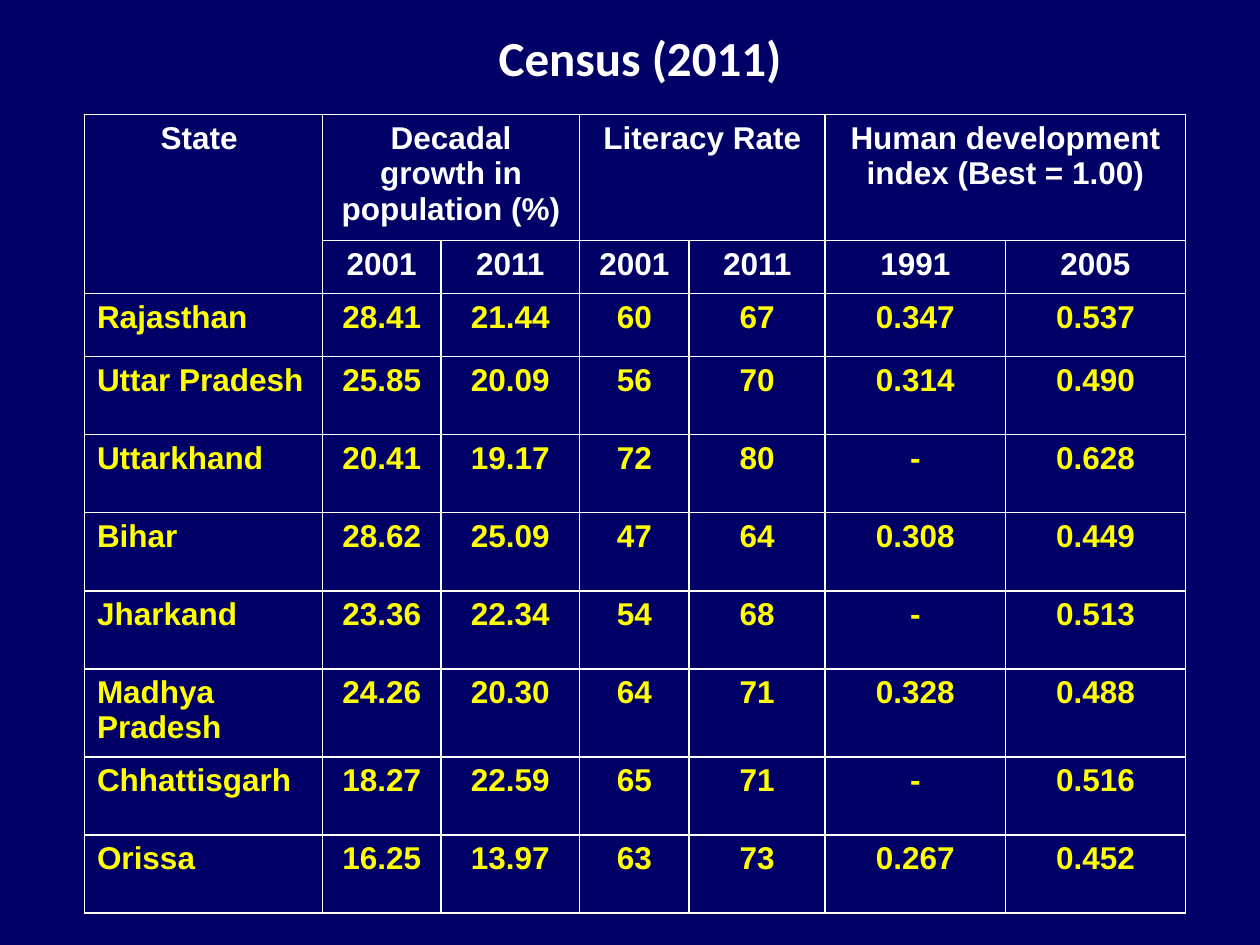
from lxml import etree
from pptx import Presentation
from pptx.dml.color import RGBColor
from pptx.enum.text import MSO_ANCHOR, PP_ALIGN
from pptx.oxml.ns import qn
from pptx.util import Inches, Pt

NAVY = RGBColor(0x00, 0x00, 0x66)
WHITE = RGBColor(0xFF, 0xFF, 0xFF)
YELLOW = RGBColor(0xFF, 0xFF, 0x00)
LEFT, CENTER, TOP = PP_ALIGN.LEFT, PP_ALIGN.CENTER, MSO_ANCHOR.TOP
TITLE_ONLY = 5

COLUMN_WIDTHS = [1.89, 0.94, 1.1, 0.87, 1.08, 1.43, 1.43]
ROW_HEIGHTS = [1, 0.42, 0.5, 0.62, 0.62, 0.62, 0.62, 0.7, 0.62, 0.62]

# Header groups: first column, columns spanned, rows spanned, text
HEADER_GROUPS = [
    (0, 1, 2, "State "),
    (1, 2, 1, "Decadal growth in population (%)"),
    (3, 2, 1, "Literacy Rate"),
    (5, 2, 1, "Human development index (Best = 1.00)"),
]
YEARS = ["2001", "2011", "2001", "2011", "1991", "2005"]
STATES = [
    ("Rajasthan", "28.41", "21.44", "60", "67", "0.347", "0.537"),
    ("Uttar Pradesh", "25.85", "20.09", "56", "70", "0.314", "0.490"),
    ("Uttarkhand", "20.41", "19.17", "72", "80", "-", "0.628"),
    ("Bihar", "28.62", "25.09", "47", "64", "0.308", "0.449"),
    ("Jharkand", "23.36", "22.34", "54", "68", "-", "0.513"),
    ("Madhya Pradesh", "24.26", "20.30", "64", "71", "0.328", "0.488"),
    ("Chhattisgarh", "18.27", "22.59", "65", "71", "-", "0.516"),
    ("Orissa", "16.25", "13.97", "63", "73", "0.267", "0.452"),
]


def write_text(text_frame, text, font_name, size, color, alignment):
    text_frame.text = text
    paragraph = text_frame.paragraphs[0]
    paragraph.alignment = alignment
    font = paragraph.runs[0].font
    font.name, font.size, font.bold = font_name, Pt(size), True
    font.color.rgb = color


def write_cell(cell, text, color=WHITE, alignment=CENTER):
    write_text(cell.text_frame, text, "Arial", 18, color, alignment)


def add_borders(cell, color, width):
    properties = cell._tc.get_or_add_tcPr()
    for index, side in enumerate(("lnL", "lnR", "lnT", "lnB")):
        line = etree.Element(qn(f"a:{side}"), w=str(Pt(width)))
        fill = etree.SubElement(line, qn("a:solidFill"))
        etree.SubElement(fill, qn("a:srgbClr"), val=str(color))
        properties.insert(index, line)


def add_title(slide, text):
    title = slide.shapes.title
    title.left, title.top = Inches(0.83), Inches(0.17)
    title.width, title.height = Inches(8.5), Inches(0.57)
    title.text_frame.vertical_anchor = TOP
    write_text(title.text_frame, text, "Calibri", 28, WHITE, CENTER)


def add_census_table(slide):
    frame = slide.shapes.add_table(
        len(ROW_HEIGHTS), len(COLUMN_WIDTHS), Inches(0.67), Inches(0.91),
        Inches(sum(COLUMN_WIDTHS)), Inches(sum(ROW_HEIGHTS)))
    table = frame.table
    table.first_row = table.horz_banding = False
    for column, width in zip(table.columns, COLUMN_WIDTHS):
        column.width = Inches(width)
    for row, height in zip(table.rows, ROW_HEIGHTS):
        row.height = Inches(height)
    for cell in table.iter_cells():
        cell.fill.background()
        add_borders(cell, WHITE, 1)

    # Two header rows
    for column, width, height, text in HEADER_GROUPS:
        cell = table.cell(0, column)
        cell.merge(table.cell(height - 1, column + width - 1))
        write_cell(cell, text)
    for column, year in enumerate(YEARS, start=1):
        write_cell(table.cell(1, column), year)

    # One row per state
    for row, values in enumerate(STATES, start=2):
        for column, value in enumerate(values):
            alignment = CENTER if column else LEFT
            write_cell(table.cell(row, column), value, YELLOW, alignment)


def main():
    presentation = Presentation()
    presentation.slide_width = Inches(10)
    presentation.slide_height = Inches(7.5)
    slide = presentation.slides.add_slide(
        presentation.slide_layouts[TITLE_ONLY])
    background = slide.background.fill
    background.solid()
    background.fore_color.rgb = NAVY
    add_census_table(slide)
    add_title(slide, "Census (2011)")
    presentation.save("out.pptx")


if __name__ == "__main__":
    main()
